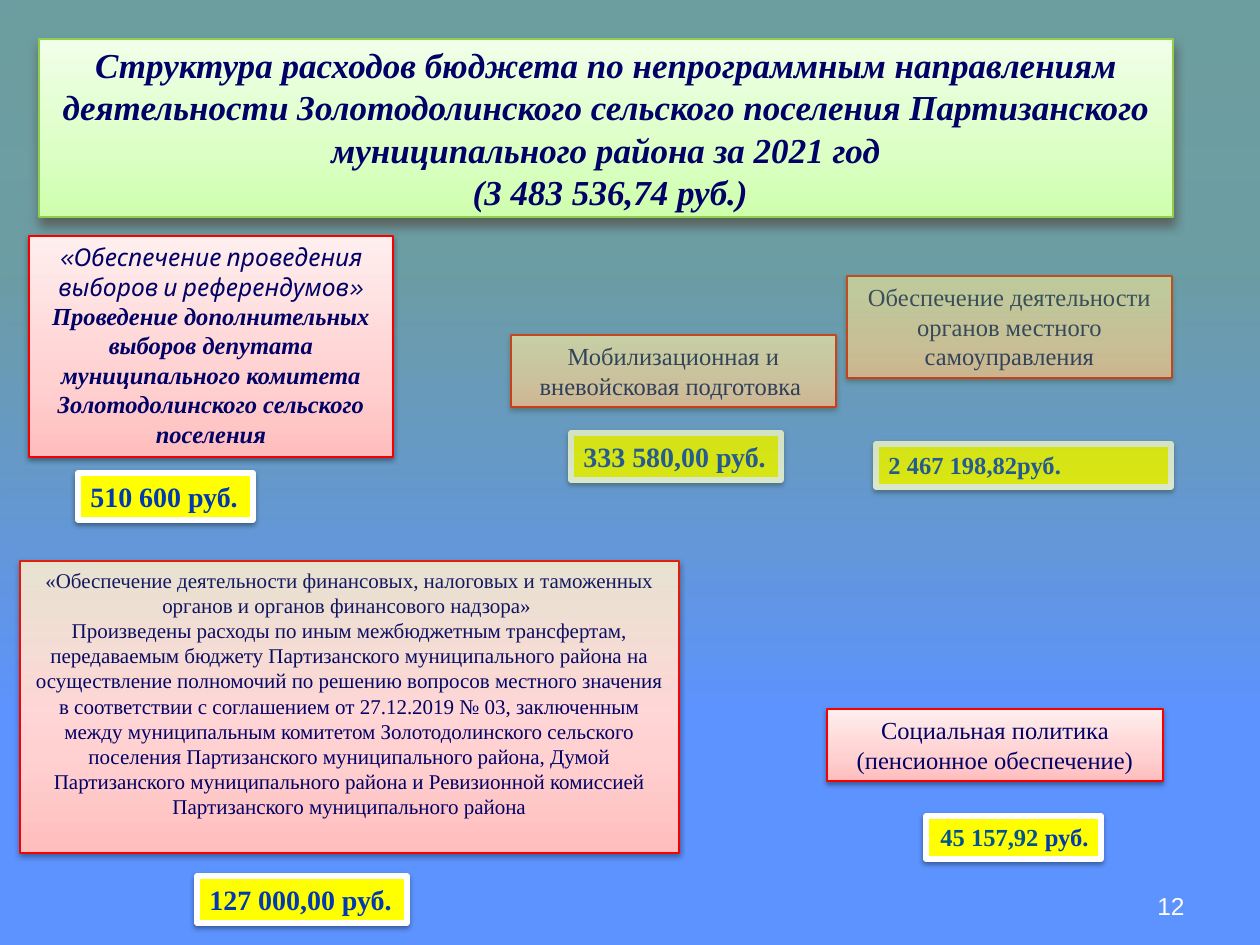
import pptx
import pptx.dml.color
import pptx.enum.shapes
import pptx.enum.text
import pptx.oxml
import pptx.oxml.ns
import pptx.util

RGB = pptx.dml.color.RGBColor
ALIGN = pptx.enum.text.PP_ALIGN
ANCHOR = pptx.enum.text.MSO_ANCHOR
PX = 914400 / 126
SERIF = "Times New Roman"
NS = pptx.oxml.ns.nsdecls("a")

SKY = RGB(0x5D, 0x93, 0xFF)
NAVY = RGB(0x00, 0x00, 0x66)
BLUE = RGB(0x00, 0x3A, 0xAE)
TEAL = RGB(0x00, 0x54, 0x90)
WHITE = RGB(0xFF, 0xFF, 0xFF)
YELLOW = RGB(0xFF, 0xFF, 0x00)
RED = RGB(0xF9, 0x00, 0x00)
GREEN = RGB(0x8F, 0xCF, 0x4B)
OLIVE = RGB(0x7B, 0xA8, 0x48)
BLACK = RGB(0x00, 0x00, 0x00)
BROWN = RGB(0x4E, 0x3B, 0x30)
PINKS = [(0, RGB(0xFF, 0xBD, 0xBD), 100), (35, RGB(0xFF, 0xD1, 0xD1), 100),
         (100, RGB(0xFF, 0xEE, 0xEE), 100)]
LIMES = [(0, RGB(0xCE, 0xFF, 0xAC), 100), (35, RGB(0xDB, 0xFF, 0xC4), 100),
         (100, RGB(0xF1, 0xFF, 0xE9), 100)]
VEIL = [(0, OLIVE, 52), (29, OLIVE, 49), (48, OLIVE, 31), (75, OLIVE, 0),
        (100, OLIVE, 0)]


def emu(box):
    """Turn a box in px into EMU."""
    return [pptx.util.Emu(round(v * PX)) for v in box]


def set_gradient(sp, stops, angle):
    """Fill a shape with a linear gradient of (position, colour, opacity)."""
    sp.fill.background()
    gs = "".join(
        f'<a:gs pos="{pos * 1000}"><a:srgbClr val="{color}">'
        f'<a:alpha val="{alpha * 1000}"/></a:srgbClr></a:gs>'
        for pos, color, alpha in stops)
    grad = pptx.oxml.parse_xml(
        f'<a:gradFill {NS} rotWithShape="1"><a:gsLst>{gs}</a:gsLst>'
        f'<a:lin ang="{angle * 60000}" scaled="0"/></a:gradFill>')
    spPr = sp._element.spPr
    spPr.replace(spPr.find(pptx.oxml.ns.qn("a:noFill")), grad)


def set_edge(sp, line, width, shadow=BLACK, alpha=38, blur=3.1, dist=1.6):
    """Outline a shape and give it a shadow falling downwards."""
    sp.line.color.rgb = line
    sp.line.width = pptx.util.Pt(width)
    spPr = sp._element.spPr
    for old in spPr.findall(pptx.oxml.ns.qn("a:effectLst")):
        spPr.remove(old)
    spPr.append(pptx.oxml.parse_xml(
        f'<a:effectLst {NS}><a:outerShdw blurRad="{round(blur * 12700)}" '
        f'dist="{round(dist * 12700)}" dir="5400000" rotWithShape="0">'
        f'<a:srgbClr val="{shadow}"><a:alpha val="{alpha * 1000}"/>'
        f'</a:srgbClr></a:outerShdw></a:effectLst>'))


def style(r, size, color, bold=False, italic=False, name=SERIF):
    """Format one run."""
    r.font.size = pptx.util.Pt(size)
    r.font.color.rgb = color
    r.font.bold, r.font.italic, r.font.name = bold, italic, name


def write(tf, lines, align, *look):
    """Write one aligned paragraph a line, all runs formatted alike."""
    tf.text = "\n".join(lines)
    for p in tf.paragraphs:
        p.alignment = align
        for r in p.runs:
            style(r, *look)


def add_rect(s, box):
    """Add a rectangle with text at the top."""
    sp = s.shapes.add_shape(pptx.enum.shapes.MSO_SHAPE.RECTANGLE, *emu(box))
    sp.shadow.inherit = False
    sp.text_frame.vertical_anchor = ANCHOR.TOP
    return sp


def add_card(s, box, lines, size=14):
    """Add a pink card naming an expense."""
    sp = add_rect(s, box)
    set_gradient(sp, PINKS, 270)
    set_edge(sp, RED, 0.75)
    sp.text_frame.word_wrap = True
    write(sp.text_frame, lines, ALIGN.CENTER, size, NAVY)
    return sp


def add_sum(s, box, text, size=16, wrap=False):
    """Add a yellow label with an amount."""
    sp = add_rect(s, box)
    sp.fill.solid()
    sp.fill.fore_color.rgb = YELLOW
    set_edge(sp, WHITE, 3)
    sp.text_frame.word_wrap = wrap
    write(sp.text_frame, [text], ALIGN.LEFT, size, BLUE, True)
    return sp


def add_run(p, text, *look):
    """Append a formatted run to a paragraph."""
    r = p.add_run()
    r.text = text
    style(r, *look)


def add_veil(s, box):
    """Lay a green tint that fades downwards."""
    sp = add_rect(s, box)
    set_gradient(sp, VEIL, 90)
    sp.line.fill.background()


def add_title(s, box, lines):
    """Place the title on a green panel in front."""
    sp = s.shapes.title
    sp.left, sp.top, sp.width, sp.height = emu(box)
    set_gradient(sp, LIMES, 270)
    set_edge(sp, GREEN, 0.75, BROWN, 60, 6, 4)
    tf = sp.text_frame
    tf.word_wrap = True
    tf.auto_size = pptx.enum.text.MSO_AUTO_SIZE.NONE
    tf.vertical_anchor = ANCHOR.MIDDLE
    write(tf, lines, ALIGN.CENTER, 20, NAVY, True, True)
    s.shapes._spTree.append(sp._element)


def add_number(s, box, text):
    """Add the slide number."""
    tf = s.shapes.add_textbox(*emu(box)).text_frame
    tf.word_wrap = True
    tf.vertical_anchor = ANCHOR.BOTTOM
    write(tf, [text], ALIGN.RIGHT, 14, WHITE, False, False, "Arial")


def main():
    """Build the slide."""
    prs = pptx.Presentation()
    prs.slide_width, prs.slide_height = emu((1260, 945))
    s = prs.slides.add_slide(prs.slide_layouts[5])
    s.background.fill.solid()
    s.background.fill.fore_color.rgb = SKY

    add_number(s, (903, 861, 294, 66), "12")
    add_card(s, (511, 335, 325, 72), ["Мобилизационная и вневойсковая подготовка "])
    add_sum(s, (876, 444, 295, 43), "2 467 198,82руб.", 14, True)
    add_card(s, (847, 276, 325, 102),
             ["Обеспечение деятельности органов местного самоуправления"])
    add_card(s, (20, 561, 659, 292), [
        "«Обеспечение деятельности финансовых, налоговых и таможенных органов "
        "и органов финансового надзора» ",
        "Произведены расходы по иным межбюджетным трансфертам, передаваемым "
        "бюджету Партизанского муниципального района на осуществление полномочий "
        "по решению вопросов местного значения в соответствии с соглашением от "
        "27.12.2019 № 03, заключенным между муниципальным комитетом "
        "Золотодолинского сельского поселения Партизанского муниципального "
        "района, Думой Партизанского муниципального района и Ревизионной "
        "комиссией Партизанского муниципального района"], 12)
    add_sum(s, (571, 433, 210, 47), "333 580,00 руб.")
    add_card(s, (827, 709, 336, 72), ["Социальная политика (пенсионное обеспечение)"])
    pension = add_sum(s, (926, 816, 175, 43), "45 157,92 ", 14)
    p = pension.text_frame.paragraphs[0]
    p.alignment = ALIGN.RIGHT
    p.runs[0].font.color.rgb = TEAL
    add_run(p, "руб.", 14, BLUE, True)
    add_sum(s, (197, 876, 210, 47), "127 000,00 руб.")

    add_veil(s, (0, 0, 1260, 945))
    add_title(s, (39, 39, 1134, 178), [
        "Структура расходов бюджета по непрограммным направлениям деятельности "
        "Золотодолинского сельского поселения Партизанского муниципального "
        "района за 2021 год", " (3 483 536,74 руб.)"])
    election = add_card(s, (29, 236, 364, 221),
                        ["«Обеспечение проведения выборов и референдумов» "])
    p = election.text_frame.paragraphs[0]
    style(p.runs[0], 14, NAVY, False, True, "Karla")
    add_run(p, "Проведение дополнительных выборов депутата муниципального комитета "
            "Золотодолинского сельского поселения", 14, NAVY, True, True)
    add_sum(s, (78, 473, 175, 47), "510 600 руб.")
    prs.save("out.pptx")


if __name__ == "__main__":
    main()
